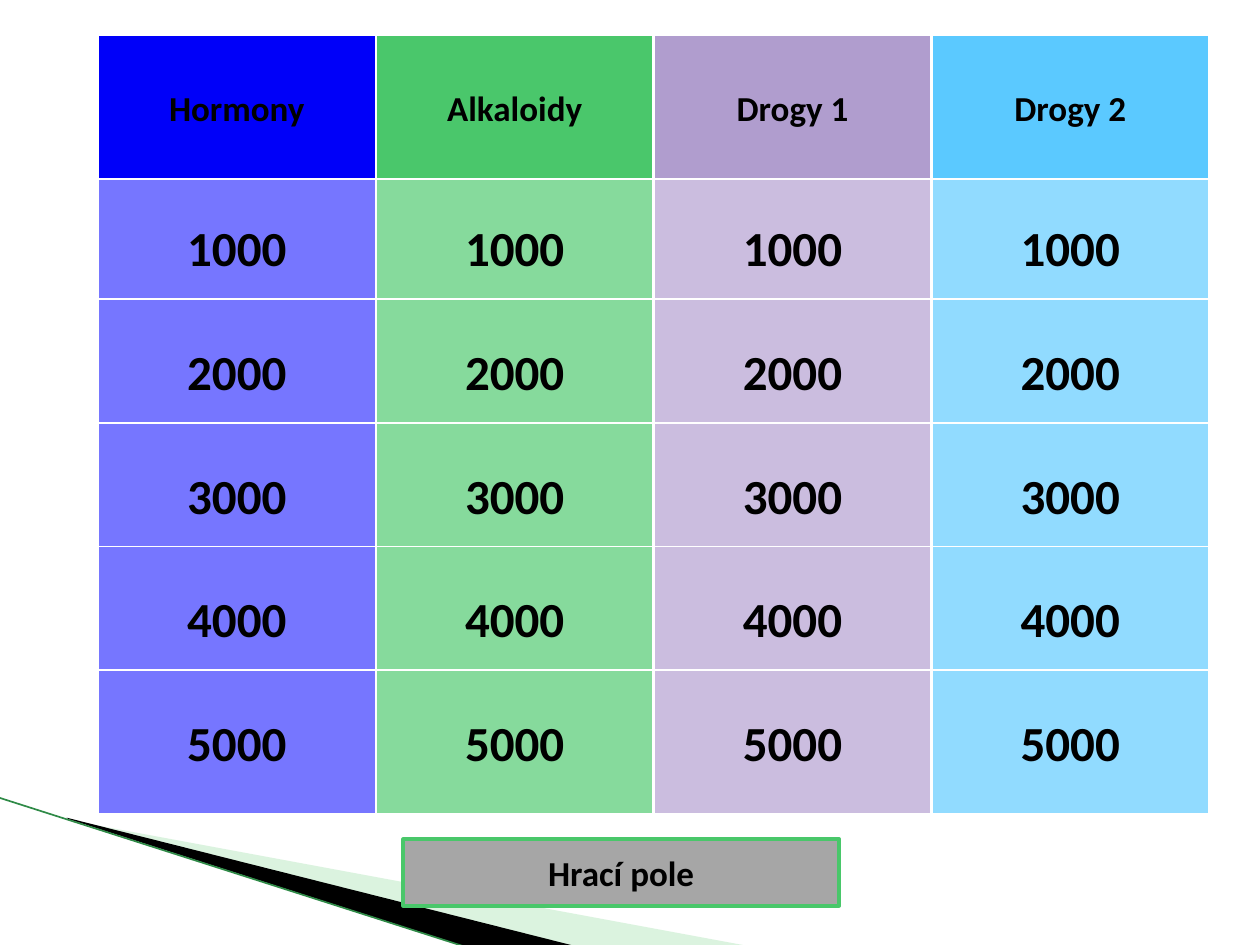
from dataclasses import dataclass

from lxml import etree
from pptx import Presentation
from pptx.dml.color import RGBColor
from pptx.enum.shapes import MSO_CONNECTOR, MSO_SHAPE
from pptx.enum.text import MSO_ANCHOR, PP_ALIGN
from pptx.oxml.ns import qn
from pptx.util import Inches, Pt

BUTTON = MSO_SHAPE.ACTION_BUTTON_CUSTOM
STRAIGHT = MSO_CONNECTOR.STRAIGHT
MIDDLE = MSO_ANCHOR.MIDDLE
CENTER = PP_ALIGN.CENTER


@dataclass(frozen=True)
class Theme:
    font: str = "Calibri"
    label_size: int = 20
    points_size: int = 28
    text: str = "000000"
    grid: str = "FFFFFF"
    field_fill: str = "A6A6A6"
    field_line: str = "49C76A"
    light_wedge: str = "A5E1AF"
    dark_wedge: str = "000000"
    stripe: str = "2F8A47"
    headers: tuple = ("0000F9", "4AC76B", "B09DCE", "5BC9FF")
    cells: tuple = ("7676FF", "86DA9C", "CBBDDF", "91DBFF")


class QuizBoard:
    """Draws the quiz board elements on one slide in one theme."""

    def __init__(self, page, theme):
        self.page = page
        self.theme = theme

    def wedge(self, points, color, opacity=100):
        corners = [(Inches(x), Inches(y)) for x, y in points]
        builder = self.page.shapes.build_freeform(*corners[0])
        builder.add_line_segments(corners[1:], close=True)
        shape = builder.convert_to_shape()
        shape.shadow.inherit = False
        shape.fill.solid()
        shape.fill.fore_color.rgb = RGBColor.from_string(color)
        shape.line.fill.background()
        if opacity < 100:
            tint = shape.fill._xPr.find(qn("a:solidFill"))[0]
            etree.SubElement(tint, qn("a:alpha"), val=str(opacity * 1000))

    def stripe(self, start, end, color, width):
        ends = [Inches(value) for value in (*start, *end)]
        line = self.page.shapes.add_connector(STRAIGHT, *ends)
        line.line.color.rgb = RGBColor.from_string(color)
        line.line.width = Pt(width)
        etree.SubElement(line._element.spPr, qn("a:effectLst"))

    def button(self, text, place, fill, size, border, border_width=1):
        shape = self.page.shapes.add_shape(BUTTON, *[Inches(v) for v in place])
        shape.shadow.inherit = False
        shape.fill.solid()
        shape.fill.fore_color.rgb = RGBColor.from_string(fill)
        shape.line.color.rgb = RGBColor.from_string(border)
        shape.line.width = Pt(border_width)
        frame = shape.text_frame
        frame.text = text
        frame.word_wrap = False
        frame.vertical_anchor = MIDDLE
        para = frame.paragraphs[0]
        para.alignment = CENTER
        font = para.runs[0].font
        font.name = self.theme.font
        font.size = Pt(size)
        font.bold = True
        font.color.rgb = RGBColor.from_string(self.theme.text)


def main():
    theme = Theme()
    deck = Presentation()
    deck.slide_width, deck.slide_height = Inches(10), Inches(7.5)
    board = QuizBoard(deck.slides.add_slide(deck.slide_layouts[6]), theme)

    board.wedge([(0.55, 6.51), (5.95, 7.51), (4.56, 7.51), (0.55, 6.5)],
                theme.light_wedge, 40)
    board.wedge([(0.53, 6.49), (4.57, 7.51), (3.72, 7.52), (0.54, 6.5)],
                theme.dark_wedge)
    board.stripe((-0.01, 6.33), (3.71, 7.52), theme.stripe, 0.95)

    left, top, header_top = 0.78, 1.39, 0.28
    column_step, row_step = 2.205, 0.9825
    width, height = 2.2, 1.14
    columns = [left + index * column_step for index in range(4)]

    for row in range(5):
        for x, fill in zip(columns, theme.cells):
            place = (x, top + row * row_step, width, height)
            board.button(str((row + 1) * 1000), place, fill,
                         theme.points_size, theme.grid)

    board.button("Hrací pole", (3.2, 6.66, 3.46, 0.53), theme.field_fill,
                 theme.label_size, theme.field_line, 2)

    topics = ("Hormony", "Alkaloidy", "Drogy 1", "Drogy 2")
    for topic, x, fill in zip(topics, columns, theme.headers):
        board.button(topic, (x, header_top, width, height), fill,
                     theme.label_size, theme.grid)

    deck.save("out.pptx")


if __name__ == "__main__":
    main()
